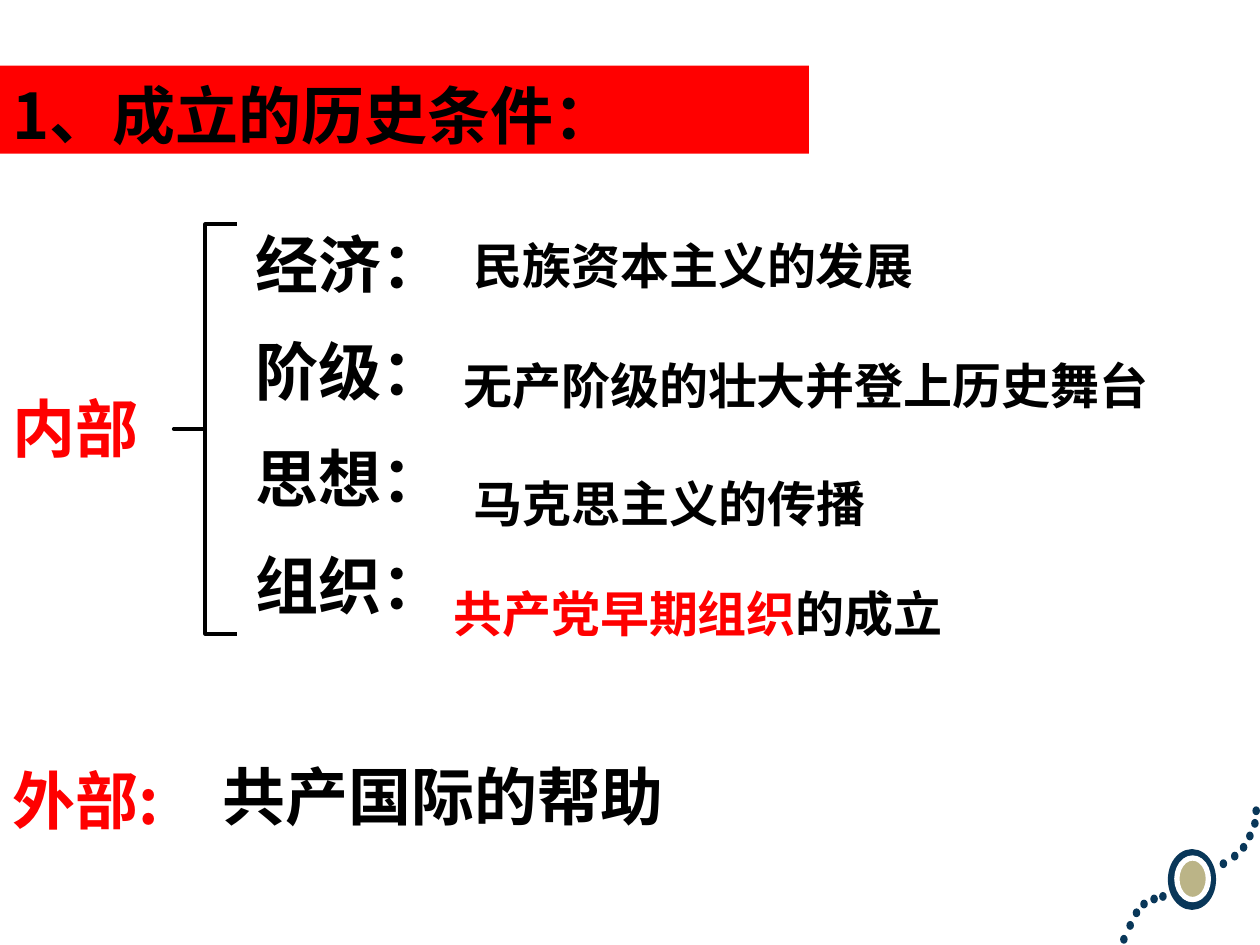
import pptx
import pptx.dml.color
import pptx.enum.shapes
import pptx.enum.text
import pptx.oxml.ns
import pptx.util
from pptx.util import Inches

COLOURS = {"red": "FF0000", "black": "000000", "white": "FFFFFF", "navy": "093759", "sand": "BBB487"}
HAN = "Noto Sans CJK SC"
FRAME = {
    "word_wrap": True,
    "auto_size": pptx.enum.text.MSO_AUTO_SIZE.NONE,
    "vertical_anchor": pptx.enum.text.MSO_ANCHOR.TOP,
    "margin_left": Inches(0.1),
    "margin_right": Inches(0.1),
    "margin_top": Inches(0.09),
    "margin_bottom": Inches(0),
}
CONDITIONS = ["经济：", "阶级：", "思想：", "组织："]
EXPLANATIONS = [
    (3.66, 1.78, 5.27, [("民族资本主义的发展", "black")]),
    (3.58, 2.73, 5.67, [("无产阶级的壮大并登上历史舞台", "black")]),
    (3.66, 3.67, 4.59, [("马克思主义的传播", "black")]),
    (3.5, 4.54, 5.4, [("共产党早期组织", "red"), ("的成立", "black")]),
]
BEADS = [
    (8.89, 7.42), (8.94, 7.31), (8.99, 7.21), (9.05, 7.14), (9.13, 7.1), (9.2, 7.08),
    (9.68, 6.82), (9.77, 6.76), (9.84, 6.69), (9.89, 6.6), (9.93, 6.5), (9.94, 6.4),
]


def rgb(name):
    """Return the named colour."""
    return pptx.dml.color.RGBColor.from_string(COLOURS[name])


def apply(target, values):
    """Set each format value on the target."""
    for key, value in values.items():
        setattr(target, key, value)


def place(element, box):
    """Move and size an element in inches."""
    apply(element, dict(zip(("left", "top", "width", "height"), map(Inches, box))))


def write(frame, paragraphs, size, face=HAN, gap=0):
    """Write paragraphs, each a list of (words, colour), in bold."""
    apply(frame, FRAME)
    for index, pieces in enumerate(paragraphs):
        paragraph = frame.paragraphs[0] if index == 0 else frame.add_paragraph()
        apply(paragraph, {
            "alignment": pptx.enum.text.PP_ALIGN.LEFT,
            "line_spacing": pptx.util.Pt(size * 1.2),
            "space_before": pptx.util.Pt(gap if index else 0),
        })
        for words, colour in pieces:
            run = paragraph.add_run()
            run.text = words
            apply(run.font, {"size": pptx.util.Pt(size), "bold": True, "name": face})
            run.font.color.rgb = rgb(colour)
            east_asian = run.font._element.makeelement(pptx.oxml.ns.qn("a:ea"), {"typeface": HAN})
            run.font._element.append(east_asian)


def add_label(slide, box, paragraphs, size, **options):
    """Add a text box with bold wording."""
    label = slide.shapes.add_textbox(*map(Inches, box))
    write(label.text_frame, paragraphs, size, **options)


def add_outline(slide, kind, box, fill=None, line=None, weight=0):
    """Add a preset shape with an optional fill and line."""
    shape = slide.shapes.add_shape(kind, *map(Inches, box))
    shape.shadow.inherit = False
    if fill:
        shape.fill.solid()
        shape.fill.fore_color.rgb = rgb(fill)
    else:
        shape.fill.background()
    if line:
        shape.line.color.rgb = rgb(line)
        shape.line.width = pptx.util.Pt(weight)
    else:
        shape.line.fill.background()
    return shape


def add_ornament(slide):
    """Draw the string of beads and the ringed medallion."""
    oval = pptx.enum.shapes.MSO_SHAPE.OVAL
    for left, top in BEADS:
        add_outline(slide, oval, (left, top, 0.06, 0.07), "navy")
    add_outline(slide, oval, (9.3, 6.77, 0.32, 0.42), "white", "navy", 4.5)
    add_outline(slide, oval, (9.34, 6.81, 0.25, 0.33), "sand", "white", 3)


def add_heading(slide):
    """Format the title placeholder as a red bar."""
    heading = slide.shapes.title
    place(heading, (0, 0.52, 6.42, 0.7))
    heading.fill.solid()
    heading.fill.fore_color.rgb = rgb("red")
    write(heading.text_frame, [[("1、成立的历史条件：", "black")]], 36)


def add_brace(slide):
    """Draw the square brace that gathers the inner conditions."""
    brace = add_outline(slide, pptx.enum.shapes.MSO_SHAPE.LEFT_BRACE,
                        (1.38, 1.78, 0.5, 3.25), line="black", weight=2.25)
    brace.adjustments[0] = 0
    brace.adjustments[1] = 0.5


def main():
    """Build the slide and save it."""
    deck = pptx.Presentation()
    apply(deck, {"slide_width": Inches(10), "slide_height": Inches(7.5)})
    slide = deck.slides.add_slide(deck.slide_layouts[5])
    add_ornament(slide)
    add_heading(slide)
    add_label(slide, (0, 3, 1.5, 0.83), [[("内部", "red")]], 36)
    add_label(slide, (1.93, 1.7, 1.83, 3.4), [[(name, "black")] for name in CONDITIONS],
              36, face="Arial", gap=18)
    add_brace(slide)
    for left, top, width, pieces in EXPLANATIONS:
        add_label(slide, (left, top, width, 0.57), [pieces], 28)
    add_label(slide, (0, 5.95, 2.33, 0.84), [[("外部:", "red")]], 36)
    add_label(slide, (1.67, 5.92, 4.33, 0.7), [[("共产国际的帮助", "black")]], 36)
    deck.save("out.pptx")


if __name__ == "__main__":
    main()
